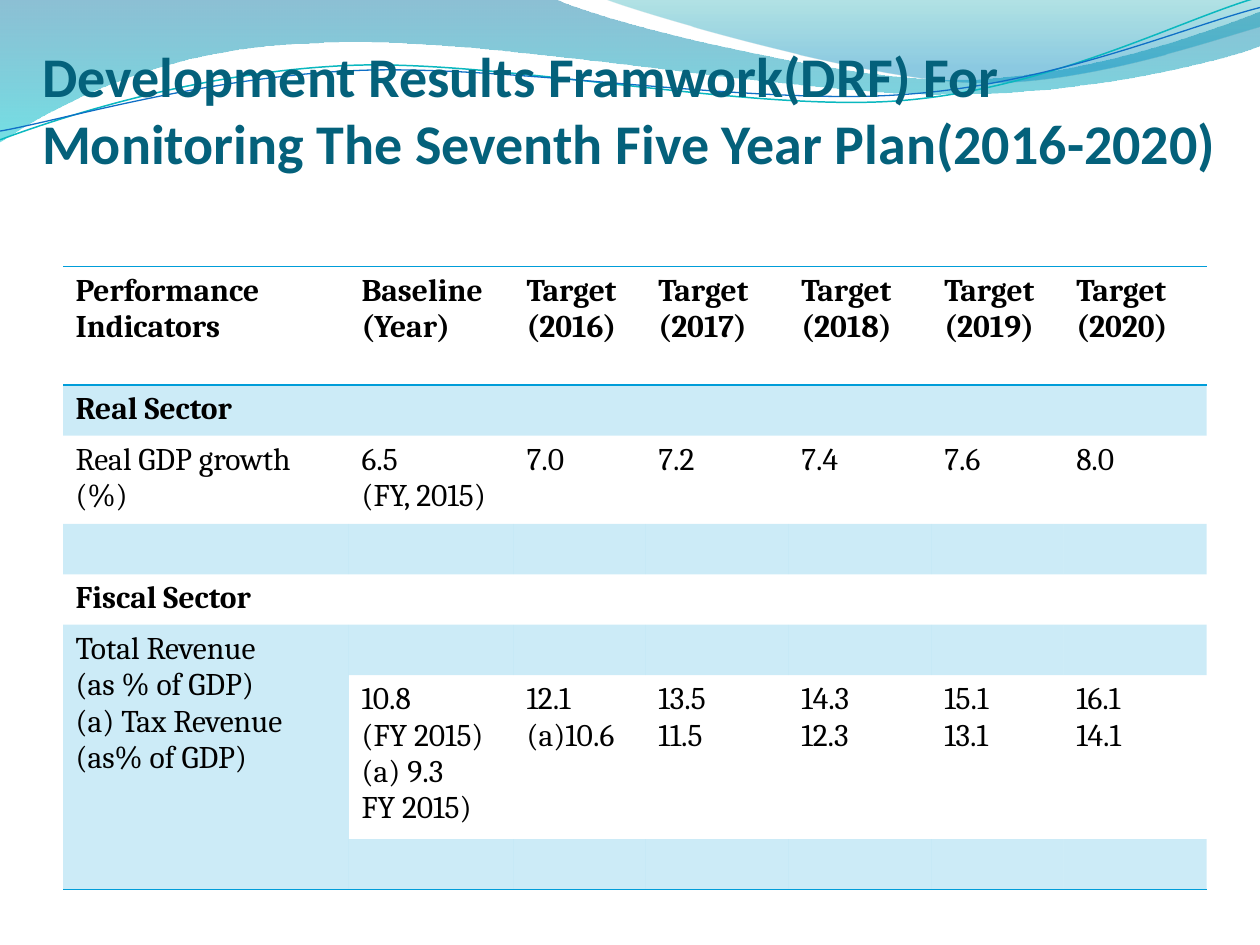
from math import cos, radians, sin

from lxml.etree import SubElement
from pptx import Presentation
from pptx.dml.color import RGBColor
from pptx.enum.text import MSO_ANCHOR as Anchor
from pptx.oxml import parse_xml
from pptx.oxml.ns import nsdecls, qn
from pptx.util import Pt

COLORS = {
    "title": "04617B",
    "text": "000000",
    "accent": "009DD9",
    "wave_blue": "0074A1",
    "wave_cyan": "00C6CF",
    "crest_teal": "00A1A9",
    "crest_blue": "008BBF",
    "line_teal": "0AB8BF",
    "line_blue": "0F6FC6",
}
PLAIN_TABLE_STYLE = "{2D5ABB26-0587-4C30-8999-92F81FD0307C}"
LINE_TILT = -2.7

LEFT_WAVE = [
    (0, 0), (316.8, -0.7),
    (342.7, 12.2, 478, 45.4, 545.8, 45.4),
    (614.2, 45.4, 689.8, 18.7, 720, 6.5),
    (720.7, 25.9),
    (707.8, 31.7, 626.4, 54.7, 537.1, 54),
    (447.8, 54, 275, 20.2, 185, 24.5),
    (92.9, 25.9, 33.1, 59.8, -0.7, 81.4),
]
RIGHT_CREST = [
    (344.9, -0.7),
    (366.5, 7.9, 491, 44.6, 553.7, 46.8),
    (616.3, 49.7, 691.9, 23, 720, 15.1),
    (720, 0),
]
TEAL_LINE = [
    (0, 79.9),
    (34.6, 67, 113.8, 41, 199.4, 37.4),
    (284.4, 33.8, 427, 64.1, 513.4, 57.6),
    (599.8, 51.1, 675.4, 10.8, 718.6, -1.4),
]
BLUE_LINE = [
    (0, 74.9),
    (33.8, 69.1, 118.1, 43.9, 203.8, 40.3),
    (290.2, 36.7, 429.8, 60.5, 516.2, 54),
    (601.9, 48.2, 677.5, 15.1, 720, 4.3),
]

TITLE = "Development Results Framwork(DRF) For Monitoring The Seventh Five Year Plan(2016-2020)"
COLUMN_WIDTHS = [163.4, 94.3, 75.4, 81.7, 81.7, 75.4, 81.7]
ROW_HEIGHTS = [67.7, 27.4, 47.5, 27.4, 27.4, 27.4, 87.8, 27.4]
BOLD_ROWS = {0, 1, 4}
ROWS = [
    ["Performance Indicators", "Baseline (Year)"]
    + [f"Target\n({year})" for year in range(2016, 2021)],
    ["Real Sector"],
    ["Real GDP growth (%)", "6.5\n(FY, 2015)", "7.0", "7.2", "7.4", "7.6", "8.0"],
    [],
    ["Fiscal Sector"],
    ["Total Revenue\n(as % of GDP)\n(a) Tax Revenue (as% of GDP)"],
    ["", "10.8\n(FY 2015) (a) 9.3\nFY 2015)", "12.1\n(a)10.6", "13.5\n11.5",
     "14.3\n12.3", "15.1\n13.1", "16.1\n14.1"],
    [],
]
MERGES = [((1, 0), (1, 6)), ((5, 0), (7, 0))]


def pairs(step):
    return list(zip(step[::2], step[1::2]))


def turned(steps, center, degrees):
    cosine, sine = cos(radians(degrees)), sin(radians(degrees))
    center_x, center_y = center
    result = []
    for step in steps:
        turned_step = []
        for x, y in pairs(step):
            dx, dy = x - center_x, y - center_y
            turned_step += [center_x + dx * cosine - dy * sine,
                            center_y + dx * sine + dy * cosine]
        result.append(turned_step)
    return result


class SlideBuilder:
    def __init__(self, slide):
        self.slide = slide

    def color(self, name):
        return RGBColor.from_string(COLORS[name])

    def set_alpha(self, fill_element, percent):
        color = fill_element.find(qn("a:srgbClr"))
        SubElement(color, qn("a:alpha")).set("val", str(percent * 1000))

    def outline(self, steps, closed):
        corners = [(Pt(step[-2]), Pt(step[-1])) for step in steps]
        builder = self.slide.shapes.build_freeform(*corners[0], scale=1.0)
        builder.add_line_segments(corners[1:], close=closed)
        shape = builder.convert_to_shape()
        shape.shadow.inherit = False
        for segment, step in zip(list(shape.element.iter(qn("a:lnTo"))), steps[1:]):
            if len(step) == 6:
                points = "".join(
                    f'<a:pt x="{Pt(x) - shape.left}" y="{Pt(y) - shape.top}"/>'
                    for x, y in pairs(step))
                segment.getparent().replace(segment, parse_xml(
                    f'<a:cubicBezTo {nsdecls("a")}>{points}</a:cubicBezTo>'))
        return shape

    def wave(self, steps, stops):
        shape = self.outline(steps, closed=True)
        shape.line.fill.background()
        shape.fill.gradient()
        shape.fill.gradient_angle = 270
        for stop, (position, name, _) in zip(shape.fill.gradient_stops, stops):
            stop.position = position
            stop.color.rgb = self.color(name)
        for element, (_, _, alpha) in zip(shape.element.iter(qn("a:gs")), stops):
            self.set_alpha(element, alpha)

    def curve(self, steps, center, name, width):
        shape = self.outline(turned(steps, center, -LINE_TILT), closed=False)
        shape.rotation = LINE_TILT
        shape.fill.background()
        shape.line.color.rgb = self.color(name)
        shape.line.width = Pt(width)

    def run(self, paragraph, text, font, size, color, bold):
        run = paragraph.add_run()
        run.text = text
        run.font.name = font
        run.font.size = Pt(size)
        run.font.bold = bold
        run.font.color.rgb = self.color(color)

    def title(self, text, left, top, width, height):
        shape = self.slide.shapes.add_textbox(Pt(left), Pt(top), Pt(width), Pt(height))
        frame = shape.text_frame
        frame.word_wrap = True
        frame.vertical_anchor = Anchor.BOTTOM
        frame.margin_left = frame.margin_right = frame.margin_bottom = 0
        frame.margin_top = Pt(3.6)
        self.run(frame.paragraphs[0], text, "Calibri", 32, "title", True)

    def cell_text(self, cell, text, bold):
        frame = cell.text_frame
        for index, line in enumerate(text.split("\n")):
            paragraph = frame.add_paragraph() if index else frame.paragraphs[0]
            self.run(paragraph, line, "Cambria", 18, "text", bold)

    def cell_borders(self, cell, sides):
        properties = cell._tc.get_or_add_tcPr()
        for index, side in enumerate(sides):
            properties.insert(index, parse_xml(
                f'<a:ln{side} {nsdecls("a")} w="{Pt(1)}"><a:solidFill>'
                f'<a:srgbClr val="{COLORS["accent"]}"/></a:solidFill></a:ln{side}>'))

    def table(self, left, top, height):
        shape = self.slide.shapes.add_table(
            len(ROWS), len(COLUMN_WIDTHS), Pt(left), Pt(top),
            Pt(sum(COLUMN_WIDTHS)), Pt(height))
        table = shape.table
        table.first_row = table.horz_banding = False
        shape.element.find(".//" + qn("a:tableStyleId")).text = PLAIN_TABLE_STYLE
        for column, column_width in zip(table.columns, COLUMN_WIDTHS):
            column.width = Pt(column_width)
        for row, row_height in zip(table.rows, ROW_HEIGHTS):
            row.height = Pt(row_height)
        shape.height = Pt(height)
        for first, last in MERGES:
            table.cell(*first).merge(table.cell(*last))
        for row_index, texts in enumerate(ROWS):
            for column_index in range(len(COLUMN_WIDTHS)):
                cell = table.cell(row_index, column_index)
                if column_index < len(texts) and texts[column_index]:
                    self.cell_text(cell, texts[column_index], row_index in BOLD_ROWS)
                if row_index % 2:
                    cell.fill.solid()
                    cell.fill.fore_color.rgb = self.color("accent")
                    self.set_alpha(cell._tc.tcPr.find(qn("a:solidFill")), 20)
                else:
                    cell.fill.background()
                if row_index == 0:
                    self.cell_borders(cell, "TB")
                elif row_index + cell.span_height == len(ROWS):
                    self.cell_borders(cell, "B")


def main():
    presentation = Presentation()
    presentation.slide_width, presentation.slide_height = Pt(720), Pt(540)
    builder = SlideBuilder(presentation.slides.add_slide(presentation.slide_layouts[6]))
    builder.wave(LEFT_WAVE, [(0, "wave_blue", 45), (1, "wave_cyan", 55)])
    builder.wave(RIGHT_CREST, [(0, "crest_teal", 30), (0.8, "crest_blue", 45)])
    builder.curve(TEAL_LINE, (359.3, 41.4), "line_teal", 0.85)
    builder.curve(BLUE_LINE, (359.6, 42.5), "line_blue", 0.75)
    builder.title(TITLE, 24, 30, 672, 70.4)
    builder.table(36, 152.4, 360)
    presentation.save("out.pptx")


if __name__ == "__main__":
    main()
